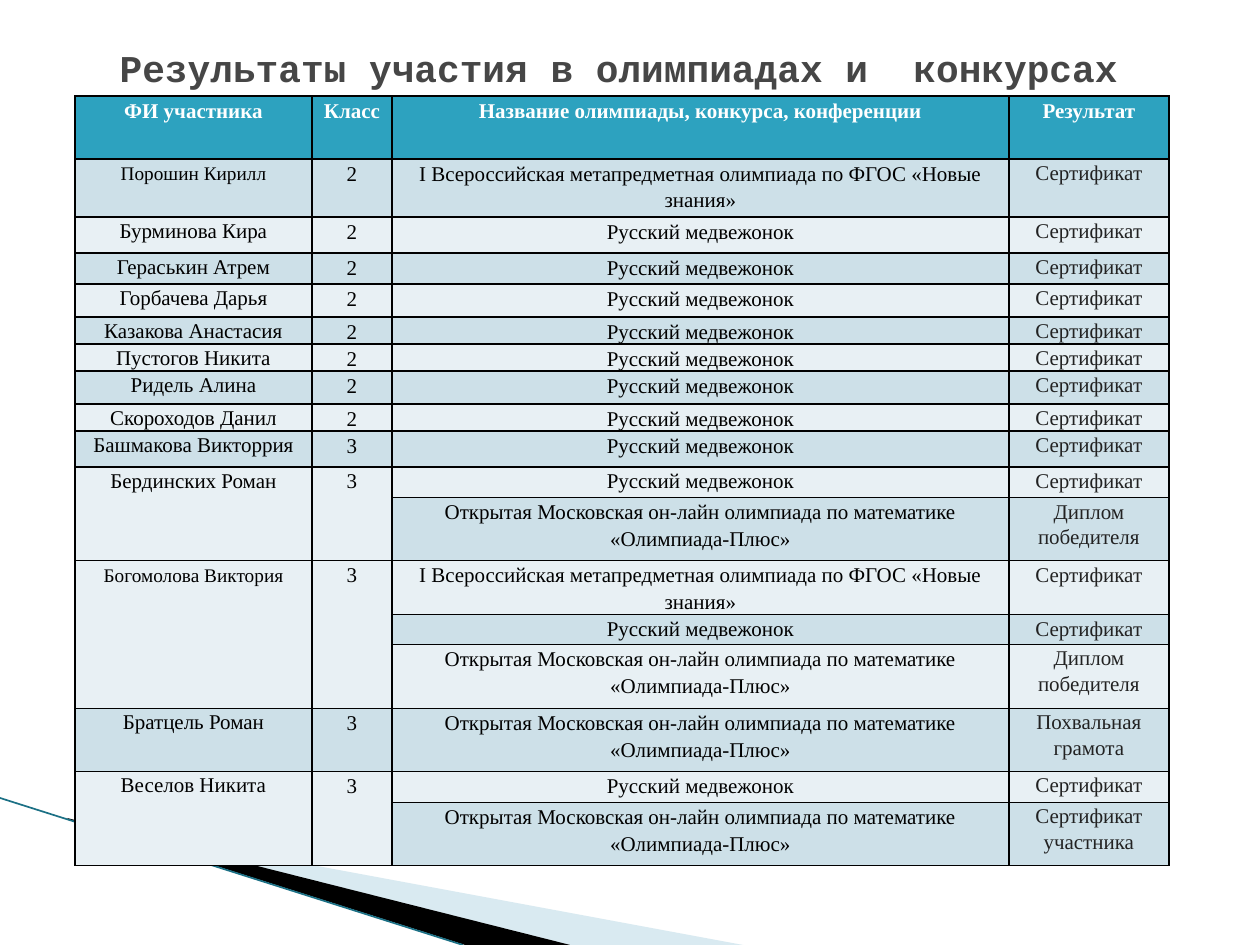
from typing import NamedTuple

import pptx
import pptx.dml.color
import pptx.enum.text
import pptx.oxml
import pptx.oxml.ns
import pptx.util
from lxml import etree

RGB = pptx.dml.color.RGBColor
Pt = pptx.util.Pt
qn = pptx.oxml.ns.qn

PX = 914400 / 126
WHITE = RGB(0xFF, 0xFF, 0xFF)
BLACK = RGB(0, 0, 0)
TITLE_GREY = RGB(0x46, 0x46, 0x46)
RESULT_GREY = RGB(0x22, 0x22, 0x22)
HEADER_TEAL = RGB(0x2D, 0xA2, 0xBF)
BAND_DARK = RGB(0xCD, 0xE0, 0xE8)
BAND_LIGHT = RGB(0xE8, 0xF0, 0xF4)
RIBBON_BLUE = RGB(0xA0, 0xCB, 0xDC)
LINE_TEAL = RGB(0x1B, 0x70, 0x85)

BEAR = "Русский медвежонок"
META = "I Всероссийская метапредметная олимпиада по ФГОС «Новые знания»"
PLUS = "Открытая Московская он-лайн олимпиада по математике «Олимпиада-Плюс»"
CERT = "Сертификат"
WINNER = "Диплом победителя"

HEADERS = ("ФИ участника", "Класс", "Название олимпиады, конкурса, конференции", "Результат")
COL_WIDTHS = (237, 80, 617, 160)
HEADER_HEIGHT = 63
EXACT = Pt(14.8)
LOOSE = 1.15


class Entry(NamedTuple):
    contest: str
    result: str
    height: int


class Pupil(NamedTuple):
    name: str
    grade: str
    entries: tuple[Entry, ...]
    name_size: int = 12


class Ribbon(NamedTuple):
    points: tuple[tuple[int, int], ...]
    frame: tuple[int, int, int, int]
    color: RGB
    opacity: int


def bear(height: int) -> Entry:
    return Entry(BEAR, CERT, height)


PUPILS = (
    Pupil("Порошин Кирилл", "2", (Entry(META, CERT, 58),), 11),
    Pupil("Бурминова Кира", "2", (bear(36),)),
    Pupil("Гераськин Атрем", "2", (bear(31),)),
    Pupil("Горбачева Дарья", "2", (bear(33),)),
    Pupil("Казакова Анастасия", "2", (bear(27),)),
    Pupil("Пустогов Никита", "2", (bear(27),)),
    Pupil("Ридель Алина", "2", (bear(33),)),
    Pupil("Скороходов Данил", "2", (bear(27),)),
    Pupil("Башмакова Викторрия", "3", (bear(36),)),
    Pupil("Бердинских Роман", "3", (bear(31), Entry(PLUS, WINNER, 63))),
    Pupil("Богомолова Виктория", "3",
          (Entry(META, CERT, 54), bear(30), Entry(PLUS, WINNER, 64)), 11),
    Pupil("Братцель Роман", "3", (Entry(PLUS, "Похвальная грамота", 63),)),
    Pupil("Веселов Никита", "3", (bear(31), Entry(PLUS, "Сертификат участника", 63))),
)

RIBBONS = (
    Ribbon(((69, 820), (743, 945), (570, 945), (69, 819)),
           (98, 689, 524, 199), RIBBON_BLUE, 40),
    Ribbon(((67, 818), (570, 945), (465, 945), (68, 819)),
           (-8, 798, 524, 116), BLACK, 100),
)


def px(n: int) -> int:
    return round(n * PX)


def set_attrs(obj, values: dict) -> None:
    for key, value in values.items():
        setattr(obj, key, value)


def set_frame(sp, ribbon: Ribbon) -> None:
    """Give the outline its own frame while its points stay where they are."""
    left, top, width, height = ribbon.frame
    dx = min(x for x, _ in ribbon.points) - left
    dy = min(y for _, y in ribbon.points) - top
    outline = sp._element.find(".//" + qn("a:pathLst"))[0]
    outline.set("w", str(width))
    outline.set("h", str(height))
    for pt in outline.iter(qn("a:pt")):
        pt.set("x", str(int(pt.get("x")) + dx))
        pt.set("y", str(int(pt.get("y")) + dy))
    set_attrs(sp, {"left": px(left), "top": px(top), "width": px(width), "height": px(height)})


def draw_ribbon(slide, ribbon: Ribbon) -> None:
    builder = slide.shapes.build_freeform(*ribbon.points[0], scale=PX)
    builder.add_line_segments(ribbon.points[1:], close=True)
    sp = builder.convert_to_shape()
    set_frame(sp, ribbon)
    sp.shadow.inherit = False
    sp.fill.solid()
    sp.fill.fore_color.rgb = ribbon.color
    sp.line.fill.background()
    if ribbon.opacity < 100:
        color = sp._element.spPr.find(".//" + qn("a:srgbClr"))
        etree.SubElement(color, qn("a:alpha"), val=str(ribbon.opacity * 1000))


def draw_line(slide) -> None:
    line = slide.shapes.add_connector(1, 0, px(798), px(463), px(945))
    line.line.color.rgb = LINE_TEAL
    line.line.width = Pt(0.95)
    etree.SubElement(line._element.spPr, qn("a:effectLst"))


def add_borders(cell) -> None:
    tcPr = cell._tc.get_or_add_tcPr()
    for i, side in enumerate(("lnL", "lnR", "lnT", "lnB")):
        ln = pptx.oxml.parse_xml(
            f'<a:{side} xmlns:a="http://schemas.openxmlformats.org/drawingml/2006/main" w="12700">'
            f'<a:solidFill><a:srgbClr val="{BLACK}"/></a:solidFill></a:{side}>')
        tcPr.insert(i, ln)


def fill_cell(cell, text: str, fill: RGB, color: RGB = BLACK, size: int = 12,
              spacing: float | int = LOOSE, bold: bool = False) -> None:
    set_attrs(cell, {"margin_left": px(9), "margin_right": px(9),
                     "margin_top": 0, "margin_bottom": 0})
    cell.fill.solid()
    cell.fill.fore_color.rgb = fill
    add_borders(cell)
    p = cell.text_frame.paragraphs[0]
    set_attrs(p, {"alignment": pptx.enum.text.PP_ALIGN.CENTER, "line_spacing": spacing})
    font = p.font
    if text:
        r = p.add_run()
        r.text = text
        font = r.font
    set_attrs(font, {"name": "Times New Roman", "size": Pt(size), "bold": bold})
    font.color.rgb = color


def draw_table(slide) -> None:
    heights = [HEADER_HEIGHT] + [e.height for pupil in PUPILS for e in pupil.entries]
    table = slide.shapes.add_table(len(heights), len(COL_WIDTHS), px(75), px(96),
                                   px(sum(COL_WIDTHS)), px(sum(heights))).table
    set_attrs(table, {"first_row": False, "horz_banding": False})
    for col, width in zip(table.columns, COL_WIDTHS):
        col.width = px(width)
    for row, height in zip(table.rows, heights):
        row.height = px(height)

    for c, text in enumerate(HEADERS):
        fill_cell(table.cell(0, c), text, HEADER_TEAL, WHITE, bold=True)
    r = 1
    for pupil in PUPILS:
        first = r
        for entry in pupil.entries:
            band = BAND_DARK if r % 2 else BAND_LIGHT
            name, grade = (pupil.name, pupil.grade) if r == first else ("", "")
            fill_cell(table.cell(r, 0), name, band, size=pupil.name_size, spacing=EXACT)
            fill_cell(table.cell(r, 1), grade, band)
            fill_cell(table.cell(r, 2), entry.contest, band)
            fill_cell(table.cell(r, 3), entry.result, band, RESULT_GREY, spacing=EXACT)
            r += 1
        if r - first > 1:
            for c in (0, 1):
                table.cell(first, c).merge(table.cell(r - 1, c))


def format_title(slide) -> None:
    title = slide.shapes.title
    set_attrs(title, {"left": px(63), "top": px(38), "width": px(1134), "height": px(58)})
    tf = title.text_frame
    set_attrs(tf, {"word_wrap": True, "auto_size": pptx.enum.text.MSO_AUTO_SIZE.NONE,
                   "vertical_anchor": pptx.enum.text.MSO_ANCHOR.MIDDLE})
    p = tf.paragraphs[0]
    p.alignment = pptx.enum.text.PP_ALIGN.CENTER
    r = p.add_run()
    r.text = "Результаты участия в олимпиадах и  конкурсах "
    set_attrs(r.font, {"name": "Courier New", "size": Pt(21.6), "bold": True})
    r.font.color.rgb = TITLE_GREY


def main() -> None:
    prs = pptx.Presentation()
    set_attrs(prs, {"slide_width": px(1260), "slide_height": px(945)})
    slide = prs.slides.add_slide(prs.slide_layouts[5])
    format_title(slide)
    for ribbon in RIBBONS:
        draw_ribbon(slide, ribbon)
    draw_line(slide)
    draw_table(slide)
    prs.save("out.pptx")


if __name__ == "__main__":
    main()
